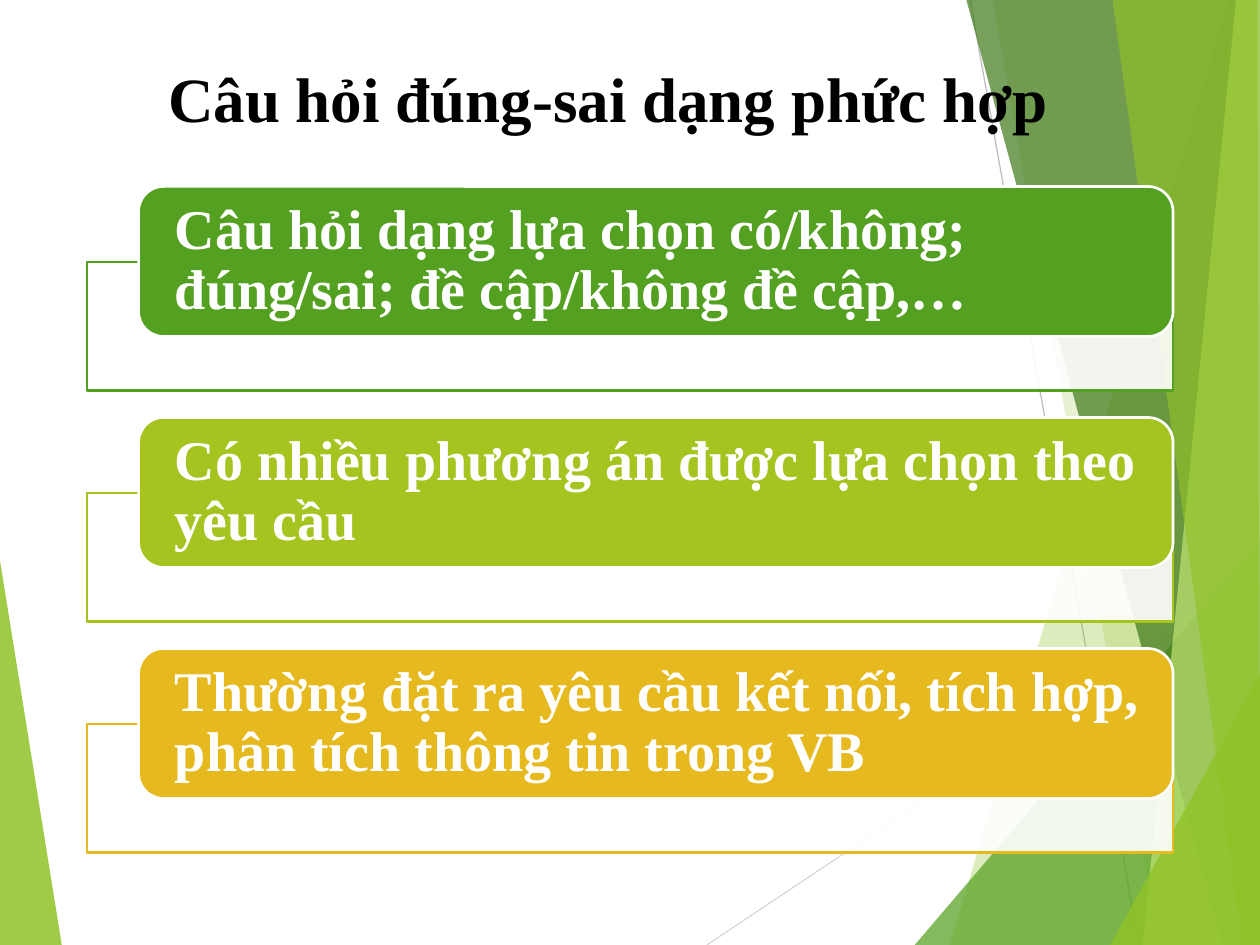
from dataclasses import dataclass

from pptx import Presentation
from pptx.dml.color import RGBColor
from pptx.enum.shapes import MSO_CONNECTOR as Conn, MSO_SHAPE as Shape
from pptx.enum.text import MSO_ANCHOR as Anchor, MSO_AUTO_SIZE as AutoSize, PP_ALIGN as Align
from pptx.oxml.ns import qn
from pptx.util import Inches, Pt
from lxml.etree import SubElement


@dataclass(frozen=True)
class Theme:
    font: str = "Times New Roman"
    title_size: int = 36
    card_size: int = 32
    ink: str = "000000"
    white: str = "FFFFFF"
    lime: str = "90C226"
    green: str = "54A021"
    forest: str = "3F7819"
    pale: str = "C0E474"
    silver: str = "D9D9D9"
    gray: str = "BFBFBF"
    accents: tuple = ("54A021", "A5C41F", "E6B91E")
    outline: float = 1.5
    hairline: float = 0.75


THEME = Theme()
WIDTH, HEIGHT = 10, 7.5

LEFT_FACET = ([(0, 4.45), (0.49, HEIGHT), (0, HEIGHT)], THEME.lime, 85)
RAYS = [
    ((5.61, HEIGHT), (WIDTH, 4.57), THEME.silver),
    ((7.7, 0), (9.04, HEIGHT), THEME.gray),
]
RIGHT_FACETS = [
    ([(9.75, 0), (7.54, HEIGHT), (WIDTH, HEIGHT), (WIDTH, 0)], THEME.lime, 30),
    ([(7.88, 0), (9.19, HEIGHT), (WIDTH, HEIGHT), (WIDTH, 0)], THEME.lime, 20),
    ([(7.26, HEIGHT), (WIDTH, 4.29), (WIDTH, HEIGHT)], THEME.green, 72),
    ([(7.67, 0), (9.7, HEIGHT), (WIDTH, HEIGHT), (WIDTH, 0)], THEME.forest, 70),
    ([(9.81, 0), (9.07, HEIGHT), (WIDTH, HEIGHT), (WIDTH, 0)], THEME.pale, 70),
    ([(8.83, 0), (9.86, HEIGHT), (WIDTH, HEIGHT), (9.98, 0)], THEME.lime, 65),
    ([(8.81, HEIGHT), (WIDTH, 5.35), (WIDTH, HEIGHT)], THEME.lime, 80),
]

TITLE = "Câu hỏi đúng-sai dạng phức hợp"
CARDS = [
    "Câu hỏi dạng lựa chọn có/không; đúng/sai; đề cập/không đề cập,…",
    "Có nhiều phương án được lựa chọn theo yêu cầu",
    "Thường đặt ra yêu cầu kết nối, tích hợp, phân tích thông tin trong VB",
]


def paint(sp, color, opacity=100, line=None):
    sp.shadow.inherit = False
    sp.fill.solid()
    sp.fill.fore_color.rgb = RGBColor.from_string(color)
    if opacity < 100:
        clr = sp.fill._xPr.find(qn("a:solidFill"))[0]
        SubElement(clr, qn("a:alpha")).set("val", str(opacity * 1000))
    if line:
        sp.line.color.rgb = RGBColor.from_string(line)
        sp.line.width = Pt(THEME.outline)
    else:
        sp.line.fill.background()


def write(tf, text, size, color, align):
    tf.text = text
    tf.word_wrap = True
    tf.auto_size = AutoSize.NONE
    p = tf.paragraphs[0]
    p.alignment = align
    font = p.runs[0].font
    font.name, font.size, font.bold = THEME.font, Pt(size), True
    font.color.rgb = RGBColor.from_string(color)
    return p


def add_facet(s, points, color, opacity):
    corners = [(Inches(x), Inches(y)) for x, y in points]
    builder = s.shapes.build_freeform(*corners[0])
    builder.add_line_segments(corners[1:], close=True)
    paint(builder.convert_to_shape(), color, opacity)


def add_ray(s, start, end, color):
    ray = s.shapes.add_connector(Conn.STRAIGHT, *map(Inches, start + end))
    ray.line.color.rgb = RGBColor.from_string(color)
    ray.line.width = Pt(THEME.hairline)
    SubElement(ray._element.spPr, qn("a:effectLst"))


def add_backdrop(s):
    add_facet(s, *LEFT_FACET)
    for ray in RAYS:
        add_ray(s, *ray)
    for facet in RIGHT_FACETS:
        add_facet(s, *facet)


def add_title(s, left, top, width, height):
    title = s.shapes.title
    s.shapes._spTree.append(title._element)
    title.left, title.top = Inches(left), Inches(top)
    title.width, title.height = Inches(width), Inches(height)
    title.text_frame.vertical_anchor = Anchor.TOP
    write(title.text_frame, TITLE, THEME.title_size, THEME.ink, Align.CENTER)


def add_card(s, left, top, width, text, color):
    indent, drop = 0.41, 0.6
    frame = s.shapes.add_shape(Shape.RECTANGLE, Inches(left), Inches(top + drop),
                               Inches(width), Inches(1.02))
    paint(frame, THEME.white, 90, color)
    label = s.shapes.add_shape(Shape.ROUNDED_RECTANGLE, Inches(left + indent), Inches(top),
                               Inches(width - indent), Inches(1.19))
    paint(label, color, line=THEME.white)
    tf = label.text_frame
    tf.margin_left, tf.margin_right = Inches(0.23), Inches(0.2)
    tf.margin_top = tf.margin_bottom = 0
    tf.vertical_anchor = Anchor.MIDDLE
    p = write(tf, text, THEME.card_size, THEME.white, Align.LEFT)
    p.line_spacing = 0.9


def add_cards(s, left, top, width, height):
    pitch = height / len(CARDS)
    for i, (text, color) in enumerate(zip(CARDS, THEME.accents)):
        add_card(s, left, top + i * pitch, width, text, color)


def main():
    prs = Presentation()
    prs.slide_width, prs.slide_height = Inches(WIDTH), Inches(HEIGHT)
    s = prs.slides.add_slide(prs.slide_layouts[5])
    add_backdrop(s)
    add_title(s, 0.56, 0.42, 8.53, 1)
    add_cards(s, 0.69, 1.48, 8.62, 5.5)
    prs.save("out.pptx")


if __name__ == "__main__":
    main()
